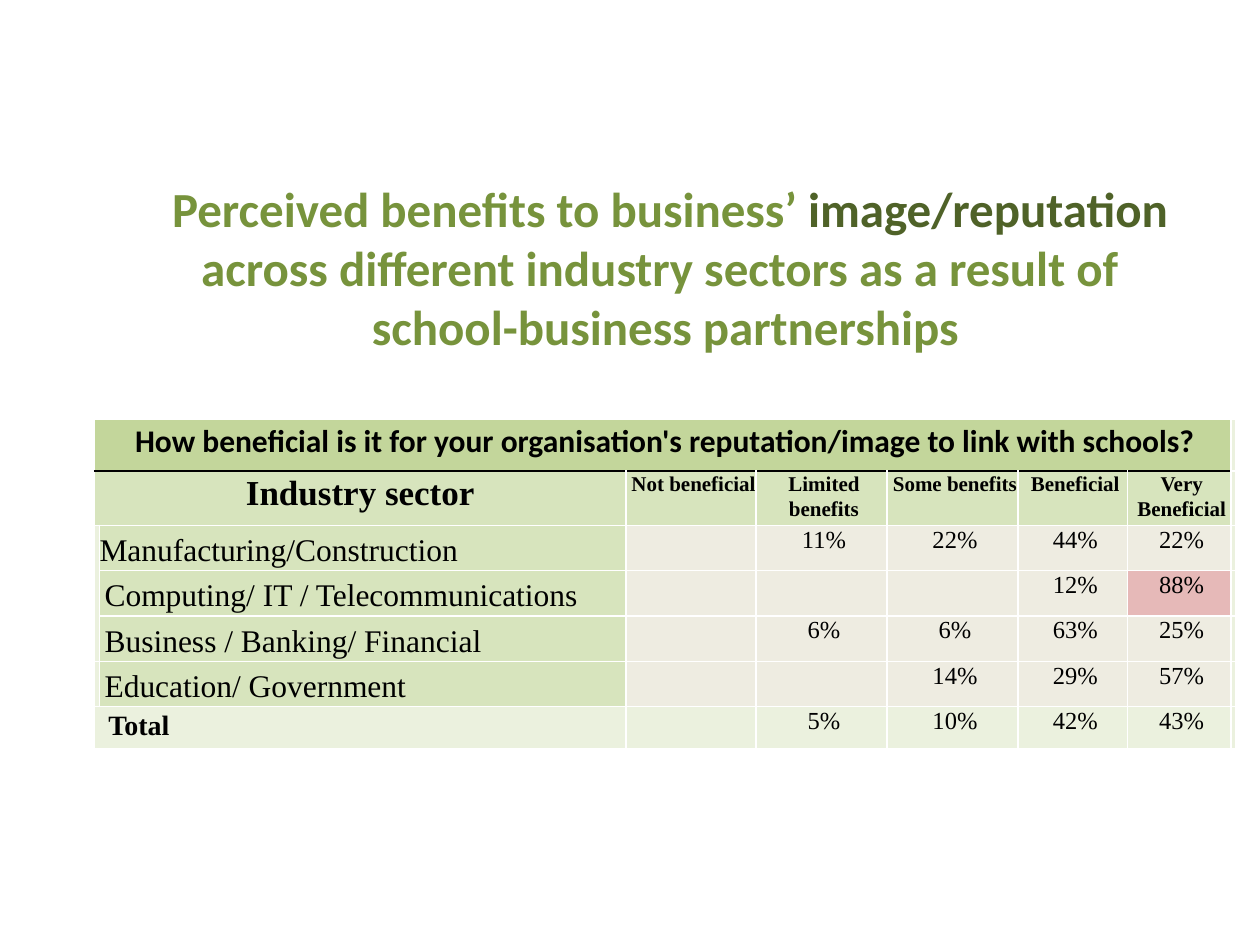
from lxml import etree
from pptx import Presentation
from pptx.dml.color import RGBColor
from pptx.enum.text import MSO_ANCHOR, PP_ALIGN
from pptx.oxml.ns import qn
from pptx.util import Inches, Pt

MID, TOP = MSO_ANCHOR.MIDDLE, MSO_ANCHOR.TOP
LEFT, CENTER = PP_ALIGN.LEFT, PP_ALIGN.CENTER

# Content
TITLE = [
    [(" ", "lead", "green"), ("Perceived benefits to business’ ", "title", "green"),
     ("image/reputation", "title", "dark"),
     (" across different industry sectors as a result of ", "title", "green")],
    [("school-business partnerships", "title", "green")],
]
ASK = "How beneficial is it for your organisation's reputation/image to link with schools?"
HEAD = ["Industry sector", "Not beneficial ", "Limited benefits", "Some benefits ",
        "Beneficial", "Very Beneficial"]
DATA = [
    ("Manufacturing/Construction", "", "11%", "22%", "44%", "22%"),
    ("Computing/ IT / Telecommunications", "", "", "", "12%", "88%"),
    ("Business / Banking/ Financial", "", "6%", "6%", "63%", "25%"),
    ("Education/ Government", "", "", "14%", "29%", "57%"),
]
TOTAL = ("Total", "", "5%", "10%", "42%", "43%")
COLS = [0.04, 4.18, 1.03, 1.04, 1.04, 0.87, 0.82, 0.03]
ROWS = [0.41, 0.43] + [0.36] * len(DATA) + [0.33]

# Theme
SANS, SERIF = "Calibri", "Times New Roman"
THEME = {
    "color": dict(green="77933C", dark="4F6228", ink="000000", line="FFFFFF",
                  ask="C3D69B", head="D7E4BD", body="EEECE1", edge="EBF1DE", hot="E6B9B8"),
    "size": dict(lead=24, title=28, ask=18, sector=20, head=12, name=18, value=14, total=16),
}
# Cell kinds: font, bold, align, anchor, indent, line spacing
KINDS = {
    "ask": (SANS, True, CENTER, TOP, 0.04, 1.07),
    "sector": (SERIF, True, CENTER, TOP, 0, 1.07),
    "head": (SERIF, True, CENTER, TOP, 0.04, 1.07),
    "name": (SERIF, False, LEFT, MID, 0.04, 1.15),
    "value": (SERIF, False, CENTER, TOP, 0.04, Pt(16)),
    "total": (SERIF, True, LEFT, MID, 0.11, Pt(16)),
}


def rgb(name):
    return RGBColor.from_string(THEME["color"][name])


def add_run(para, text, size, color, face, bold):
    run = para.add_run()
    run.text = text
    look = {"name": face, "size": Pt(THEME["size"][size]), "bold": bold}
    for key, val in look.items():
        setattr(run.font, key, val)
    run.font.color.rgb = rgb(color)


def write(cell, text, kind, indent=None):
    face, bold, align, anchor, gap, pitch = KINDS[kind]
    cell.vertical_anchor = anchor
    para = cell.text_frame.paragraphs[0]
    for key, val in {"alignment": align, "line_spacing": pitch}.items():
        setattr(para, key, val)
    props = para._p.get_or_add_pPr()
    props.set("marL", str(Inches(gap if indent is None else indent)))
    props.set("indent", "0")
    add_run(para, text, kind, "ink", face, bold)


def border(cell, sides):
    props = cell._tc.get_or_add_tcPr()
    for spot, (side, color) in enumerate(sides.items()):
        line = etree.Element(qn("a:ln" + side), w=str(Pt(1)))
        fill = etree.SubElement(line, qn("a:solidFill"))
        etree.SubElement(fill, qn("a:srgbClr"), val=THEME["color"][color])
        props.insert(spot, line)


def shade(row, col):
    if row == 0 and col < 7:
        return "ask"
    if col == 7 or row == len(ROWS) - 1:
        return "edge"
    if row == 1:
        return "head"
    if col == 0:
        return "edge"
    if col == 1:
        return "head"
    return "hot" if DATA[row - 2][col - 1] == "88%" else "body"


deck = Presentation()
deck.slide_width, deck.slide_height = Inches(10), Inches(7.5)
slide = deck.slides.add_slide(deck.slide_layouts[6])

# Table frame
frame = slide.shapes.add_table(len(ROWS), len(COLS), Inches(0.75), Inches(3.33),
                               Inches(sum(COLS)), Inches(sum(ROWS)))
table = frame.table
table.first_row = table.horz_banding = False
for col, width in zip(table.columns, COLS):
    col.width = Inches(width)
for row, height in zip(table.rows, ROWS):
    row.height = Inches(height)

# Cell fills and borders
for r in range(len(ROWS)):
    for c in range(len(COLS)):
        cell = table.cell(r, c)
        for side in ("left", "right", "top", "bottom"):
            setattr(cell, "margin_" + side, 0)
        cell.fill.solid()
        cell.fill.fore_color.rgb = rgb(shade(r, c))
        sides = dict.fromkeys("LRTB", "line")
        if c < 7 and r < 2:
            sides["B" if r == 0 else "T"] = "ink"
        border(cell, sides)

# Merged cells: first corner, last corner
last = len(ROWS) - 1
for start, end in [((0, 0), (0, 6)), ((1, 0), (1, 1)), ((2, 0), (4, 0)), ((last, 0), (last, 1))]:
    table.cell(*start).merge(table.cell(*end))

# Table text
write(table.cell(0, 0), ASK, "ask")
for r, line in enumerate([HEAD, *DATA, TOTAL], 1):
    first, rest = {1: ("sector", "head"), last: ("total", "value")}.get(r, ("name", "value"))
    write(table.cell(r, 1 if first == "name" else 0), line[0], first, 0 if r == 2 else None)
    for c, text in enumerate(line[1:], 2):
        if text:
            write(table.cell(r, c), text, rest)

# Title
box = slide.shapes.add_textbox(Inches(0.85), Inches(1.37), Inches(8.86), Inches(1.51))
text = box.text_frame
text.word_wrap = True
for i, parts in enumerate(TITLE):
    para = text.add_paragraph() if i else text.paragraphs[0]
    para.alignment = CENTER
    for words, size, color in parts:
        add_run(para, words, size, color, SANS, True)

deck.save("out.pptx")
